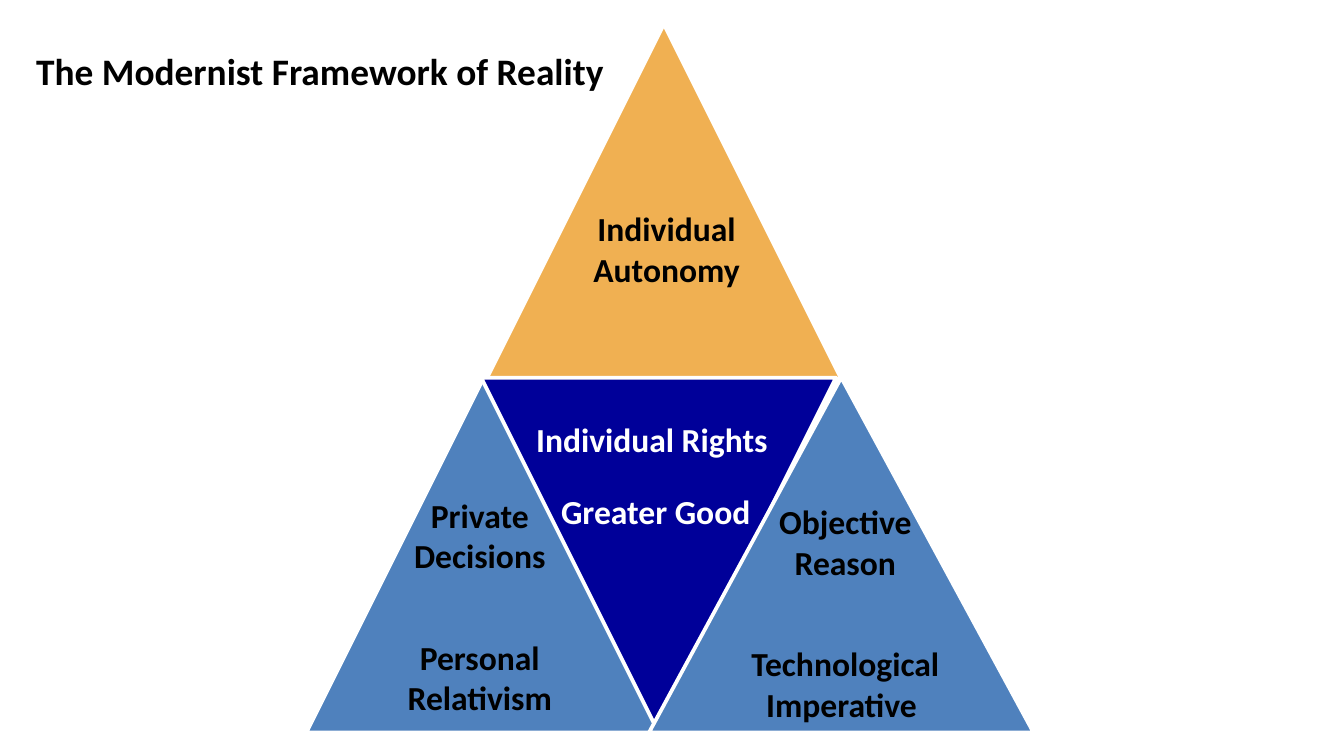
from dataclasses import dataclass

from pptx import Presentation
from pptx.dml.color import RGBColor
from pptx.enum import shapes, text
from pptx.util import Inches, Pt


@dataclass(frozen=True)
class Theme:
    font: str = "Calibri"
    black: RGBColor = RGBColor(0x00, 0x00, 0x00)
    white: RGBColor = RGBColor(0xFF, 0xFF, 0xFF)
    orange: RGBColor = RGBColor(0xF0, 0xB0, 0x52)
    blue: RGBColor = RGBColor(0x4F, 0x81, 0xBD)
    navy: RGBColor = RGBColor(0x00, 0x00, 0x99)
    title_size: Pt = Pt(20)
    label_size: Pt = Pt(18)
    outline: Pt = Pt(2)


THEME = Theme()
TRIANGLE_SIDE = 2.64
LOWER_ROW_TOP = 2.81


def add_triangle(group, left, top, color, width=TRIANGLE_SIDE, rotation=0):
    triangle = group.shapes.add_shape(
        shapes.MSO_SHAPE.ISOSCELES_TRIANGLE,
        Inches(left), Inches(top), Inches(width), Inches(TRIANGLE_SIDE))
    triangle.rotation = rotation
    triangle.shadow.inherit = False
    triangle.fill.solid()
    triangle.fill.fore_color.rgb = color
    triangle.line.color.rgb = THEME.white
    triangle.line.width = THEME.outline


def add_label(slide, box, lines, size=THEME.label_size, color=THEME.black,
              alignment=text.PP_ALIGN.CENTER):
    """Add bold text; lines holds pairs of wording and points of space before."""
    label = slide.shapes.add_textbox(*map(Inches, box))
    frame = label.text_frame
    frame.word_wrap = True
    frame.auto_size = text.MSO_AUTO_SIZE.SHAPE_TO_FIT_TEXT
    frame.text = "\n".join(wording for wording, _ in lines)
    for paragraph, (_, gap) in zip(frame.paragraphs, lines):
        paragraph.alignment = alignment
        if gap:
            paragraph.space_before = Pt(gap)
        for run in paragraph.runs:
            run.font.name = THEME.font
            run.font.size = size
            run.font.bold = True
            run.font.color.rgb = color


def add_pyramid(slide):
    group = slide.shapes.add_group_shape()
    add_triangle(group, 3.62, 0.18, THEME.orange)
    add_triangle(group, 2.28, LOWER_ROW_TOP, THEME.blue)
    add_triangle(group, 3.58, LOWER_ROW_TOP, THEME.navy, rotation=180)
    add_triangle(group, 4.83, LOWER_ROW_TOP, THEME.blue, width=2.86)


def main():
    presentation = Presentation()
    presentation.slide_width = Inches(10)
    presentation.slide_height = presentation.slide_width * 9 // 16
    slide = presentation.slides.add_slide(presentation.slide_layouts[6])

    add_pyramid(slide)
    add_label(slide, (4.17, 1.5, 1.58, 0.71), [("Individual Autonomy", 0)])
    add_label(slide, (3.85, 3.07, 2.06, 0.95),
              [("Individual Rights ", 0), ("Greater Good", 17)],
              color=THEME.white)
    add_label(slide, (2.78, 3.63, 1.58, 1.77),
              [("Private Decisions", 0), ("Personal Relativism", 33)])
    add_label(slide, (5.33, 3.68, 1.92, 1.77),
              [("Objective", 0), ("Reason", 0),
               ("Technological Imperative ", 33)])
    add_label(slide, (0.17, 0.31, 4.46, 0.44),
              [("The Modernist Framework of Reality", 0)],
              size=THEME.title_size, alignment=text.PP_ALIGN.LEFT)

    presentation.save("out.pptx")


if __name__ == "__main__":
    main()
